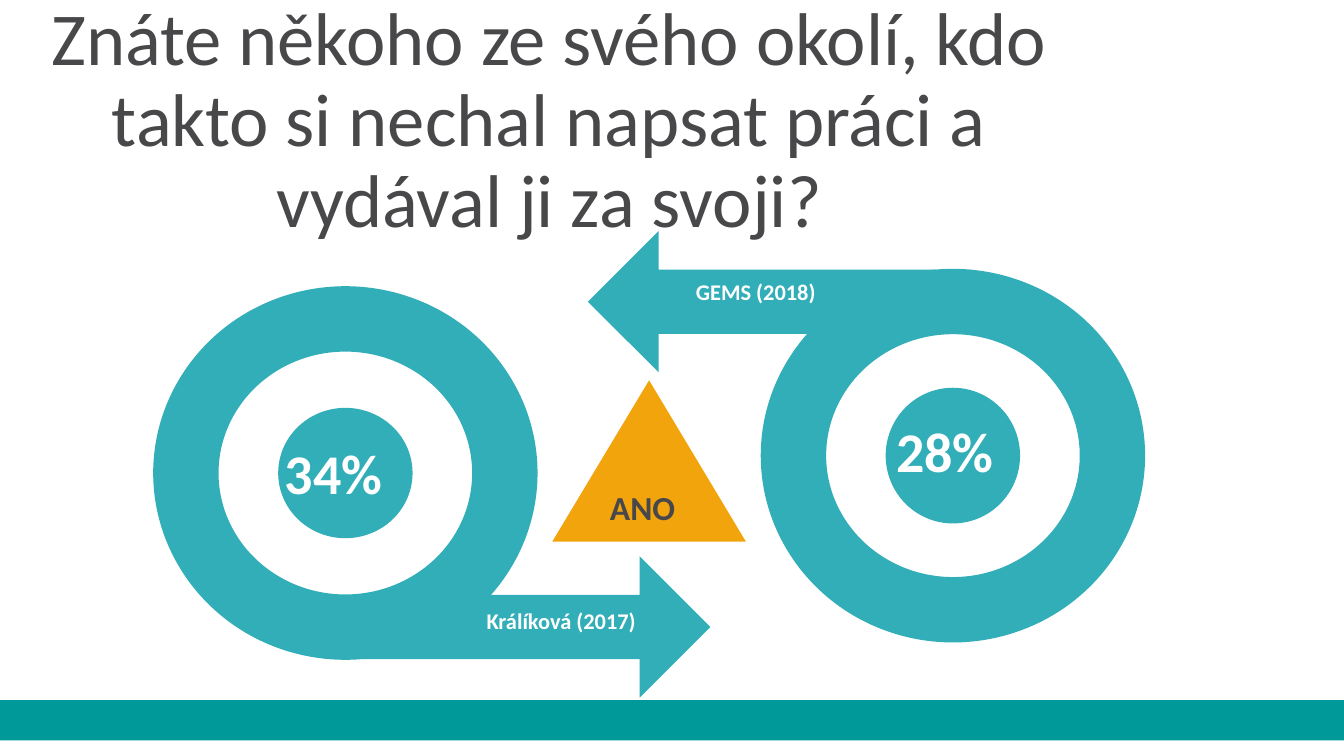
import pptx
import pptx.util
import pptx.dml.color
import pptx.enum.shapes
import pptx.enum.text

PX = 4572  # 200 px to the inch
SHAPE = pptx.enum.shapes.MSO_SHAPE
ALIGN = pptx.enum.text.PP_ALIGN
ANCHOR = pptx.enum.text.MSO_ANCHOR
COLOR = {"band": "009999", "teal": "32AEB8", "gold": "F2A40D",
         "white": "FFFFFF", "dark": "484749"}


def rgb(name):
    return pptx.dml.color.RGBColor.from_string(COLOR[name])


def place(shape, box):
    shape.left, shape.top, shape.width, shape.height = [v * PX for v in box]


def draw(slide, kind, box, color, adjust=(), turn=0):
    shape = slide.shapes.add_shape(kind, *[v * PX for v in box])
    for i, value in enumerate(adjust):
        shape.adjustments[i] = value
    shape.rotation = turn
    shape.shadow.inherit = False
    shape.fill.solid()
    shape.fill.fore_color.rgb = rgb(color)
    shape.line.fill.background()


def write(shape, text, size, color, bold=True, align=ALIGN.LEFT, pad=20):
    frame = shape.text_frame
    frame.word_wrap = True
    frame.auto_size = pptx.enum.text.MSO_AUTO_SIZE.NONE
    frame.margin_left = frame.margin_right = 20 * PX
    frame.margin_top = frame.margin_bottom = pad * PX
    para = frame.paragraphs[0]
    para.alignment = align
    run = para.add_run()
    run.text = text
    run.font.name = "Calibri"
    run.font.size = pptx.util.Pt(size)
    run.font.bold = bold
    run.font.color.rgb = rgb(color)
    return frame


def label(slide, box, *args, **style):
    area = slide.shapes.add_textbox(*[v * PX for v in box])
    write(area, *args, **style).vertical_anchor = ANCHOR.TOP


def title(slide, box, text):
    shape = slide.shapes.title
    place(shape, box)
    frame = write(shape, text, 40, "dark", bold=False, align=ALIGN.CENTER)
    frame.vertical_anchor = ANCHOR.MIDDLE
    para = frame.paragraphs[0]
    para.line_spacing = 0.9
    para.space_before = pptx.util.Pt(0)


def loop(slide, box, hub, turn=0):
    """Ring with an arrow leaving it; a half turn flips the whole box."""
    x, y, w, h = box

    def spot(left, top, wide, high):
        if turn:
            left, top = w - left - wide, h - top - high
        return x + left, y + top, wide, high

    ring = spot(0, 0, 572, 556)
    draw(slide, SHAPE.DONUT, ring, "teal", [0.175], turn)
    draw(slide, SHAPE.RIGHT_ARROW, spot(311, 402, 518, 210), "teal",
         [0.455, 0.5], turn)
    # Hub centred in the ring
    left = ring[0] + (ring[2] - 200) // 2
    top = ring[1] + (ring[3] - hub) // 2
    draw(slide, SHAPE.OVAL, (left, top, 200, hub), "teal")


def share(slide, box, value, value_at, source, source_box, align):
    """Percentage in the hub and source on the arrow."""
    x, y = box[:2]
    left, top, wide, high = source_box
    label(slide, (x + left, y + top, wide, high), source, 12, "white",
          align=align, pad=10)
    left, top, wide, high = value_at
    label(slide, (x + left, y + top, wide, high), value, 30, "white")


def answer(slide, box):
    x, y, w, h = box
    draw(slide, SHAPE.ISOSCELES_TRIANGLE, box, "gold", [0.5])
    label(slide, (x + 66, y + 138, 156, 72), "ANO", 18, "dark")


def main():
    deck = pptx.Presentation()
    deck.slide_width, deck.slide_height = 2000 * PX, 1125 * PX
    slide = deck.slides.add_slide(deck.slide_layouts[5])

    # Bottom band
    draw(slide, SHAPE.RECTANGLE, (0, 1042, 2000, 60), "band")

    # Two loops facing each other around the answer
    first, second = (228, 426, 829, 612), (875, 344, 829, 612)
    loop(slide, first, 194)
    loop(slide, second, 202, turn=180)
    answer(slide, (822, 566, 288, 240))
    share(slide, first, "34%", (176, 206, 214, 144), "Králíková (2017)",
          (368, 468, 370, 60), ALIGN.RIGHT)
    share(slide, second, "28%", (439, 256, 214, 154), "GEMS (2018)",
          (141, 60, 512, 60), ALIGN.LEFT)

    title(slide, (4, 60, 1626, 244),
          "Znáte někoho ze svého okolí, kdo takto si nechal napsat práci a "
          "vydával ji za svoji?")
    deck.save("out.pptx")


if __name__ == "__main__":
    main()
